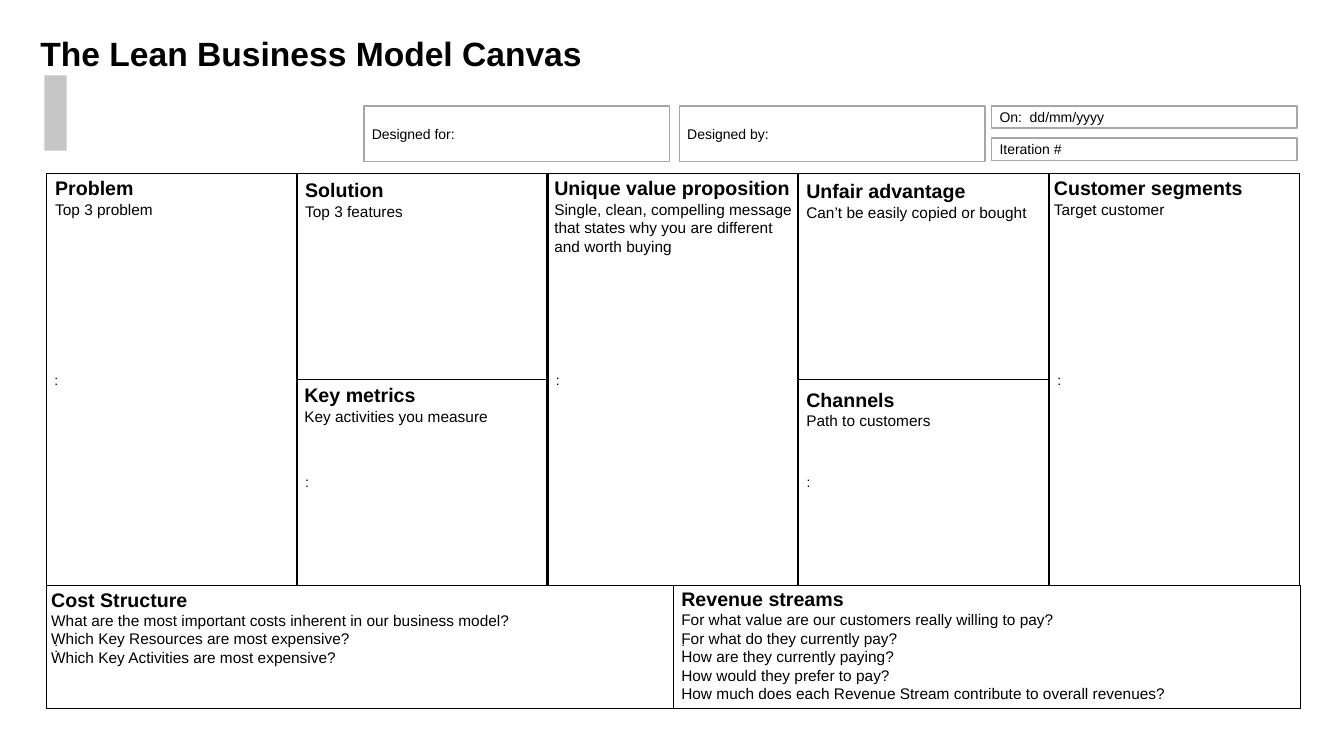
from pptx import Presentation
from pptx.dml.color import RGBColor
from pptx.enum.shapes import MSO_SHAPE
from pptx.enum.text import MSO_ANCHOR, MSO_AUTO_SIZE, PP_ALIGN
from pptx.util import Cm, Pt

RECT = MSO_SHAPE.RECTANGLE
MIDDLE = MSO_ANCHOR.MIDDLE
LEFT = PP_ALIGN.LEFT
GROW = MSO_AUTO_SIZE.SHAPE_TO_FIT_TEXT
FONT = "Arial"
BLACK, WHITE, GREY, SILVER = "000000", "FFFFFF", "A6A6A6", "C6C6C6"

# Canvas grid, in centimetres
EDGE, TOP, PITCH, WIDE = 1.17, 4.37, 6.32, 6.3
TALL, HALF, MID = 10.39, 5.2, 9.55
BASE, BASE_W, BASE_H = 14.76, 15.8, 3.1

# Column, top, height, text of each cell above the base row
CELLS = [
    (0, TOP, TALL, ":"),
    (1, MID, HALF, ":"),
    (1, TOP, HALF, ""),
    (2, TOP, TALL, ":"),
    (3, MID, HALF, ":"),
    (3, TOP, HALF, ""),
    (4, TOP, TALL, ":"),
]

# Left, top, width, height, text of each header field
FIELDS = [
    (9.17, 2.67, 7.7, 1.4, "Designed for:"),
    (17.12, 2.67, 7.7, 1.4, "Designed by:"),
    (24.99, 2.67, 7.7, 0.56, "On:  dd/mm/yyyy"),
    (24.99, 3.48, 7.7, 0.56, "Iteration #"),
]

# Left, top, width, height, wrap, heading, lines of each note
NOTES = [
    (1.14, 4.32, 3.05, 1.32, False, "Problem", ["Top 3 problem"]),
    (7.44, 4.37, 3.02, 1.32, False, "Solution", ["Top 3 features"]),
    (13.72, 4.32, 6.73, 2.26, True, "Unique value proposition",
     ["Single, clean, compelling message that states why you are different "
      "and worth buying"]),
    (20.07, 4.39, 6.73, 1.32, True, "Unfair advantage",
     ["Can’t be easily copied or bought"]),
    (26.31, 4.32, 6.73, 1.32, True, "Customer segments", ["Target customer"]),
    (20.07, 9.65, 6.73, 1.32, True, "Channels", ["Path to customers"]),
    (7.42, 9.53, 6.73, 1.32, True, "Key metrics",
     ["Key activities you measure"]),
    (16.92, 14.66, 13.64, 3.2, True, "Revenue streams",
     ["For what value are our customers really willing to pay?",
      "For what do they currently pay?",
      "How are they currently paying?",
      "How would they prefer to pay?",
      "How much does each Revenue Stream contribute to overall revenues?"]),
    (1.04, 14.68, 13.64, 2.26, True, "Cost Structure",
     ["What are the most important costs inherent in our business model?",
      "Which Key Resources are most expensive?",
      "Which Key Activities are most expensive?"]),
]


def color(code):
    return RGBColor.from_string(code)


def style(para, size, bold=False):
    para.alignment = LEFT
    for run in para.runs:
        run.font.name = FONT
        run.font.size = Pt(size)
        run.font.bold = bold
        run.font.color.rgb = color(BLACK)


def inset(frame, side, edge):
    frame.margin_left = frame.margin_right = Cm(side)
    frame.margin_top = frame.margin_bottom = Cm(edge)


def add_box(slide, x, y, w, h, text="", fill=WHITE, line=None):
    box = slide.shapes.add_shape(RECT, Cm(x), Cm(y), Cm(w), Cm(h))
    box.shadow.inherit = False
    box.fill.solid()
    box.fill.fore_color.rgb = color(fill)
    if line:
        box.line.color.rgb = color(line)
        box.line.width = Pt(1)
    else:
        box.line.fill.background()
    if text:
        frame = box.text_frame
        frame.text = text
        frame.vertical_anchor = MIDDLE
        inset(frame, 0.2, 0.1)
        style(frame.paragraphs[0], 10)


def add_title(slide, text):
    frame = slide.shapes.add_textbox(
        Cm(1.02), Cm(0.95), Cm(26.04), Cm(1.09)).text_frame
    frame.word_wrap = True
    inset(frame, 0, 0)
    frame.text = text
    para = frame.paragraphs[0]
    para.line_spacing = 0.9
    style(para, 24, True)


def add_note(slide, x, y, w, h, wrap, head, lines):
    """Add a bold heading with plain lines under it."""
    frame = slide.shapes.add_textbox(Cm(x), Cm(y), Cm(w), Cm(h)).text_frame
    frame.word_wrap = wrap
    frame.auto_size = GROW
    frame.text = "\n".join([head, *lines])
    first, *rest = frame.paragraphs
    style(first, 14, True)
    for para in rest:
        style(para, 11)


def main():
    deck = Presentation()
    deck.slide_width, deck.slide_height = Cm(33.87), Cm(19.05)
    slide = deck.slides.add_slide(deck.slide_layouts[6])

    add_box(slide, 1.12, 1.9, 0.56, 1.9, fill=SILVER)
    add_title(slide, "The Lean Business Model Canvas")
    for field in FIELDS:
        add_box(slide, *field, line=GREY)
    for side in range(2):
        add_box(slide, EDGE + side * BASE_W, BASE, BASE_W, BASE_H, ":",
                line=BLACK)
    for col, y, h, text in CELLS:
        add_box(slide, EDGE + col * PITCH, y, WIDE, h, text, line=BLACK)
    for note in NOTES:
        add_note(slide, *note)

    deck.save("out.pptx")


if __name__ == "__main__":
    main()
